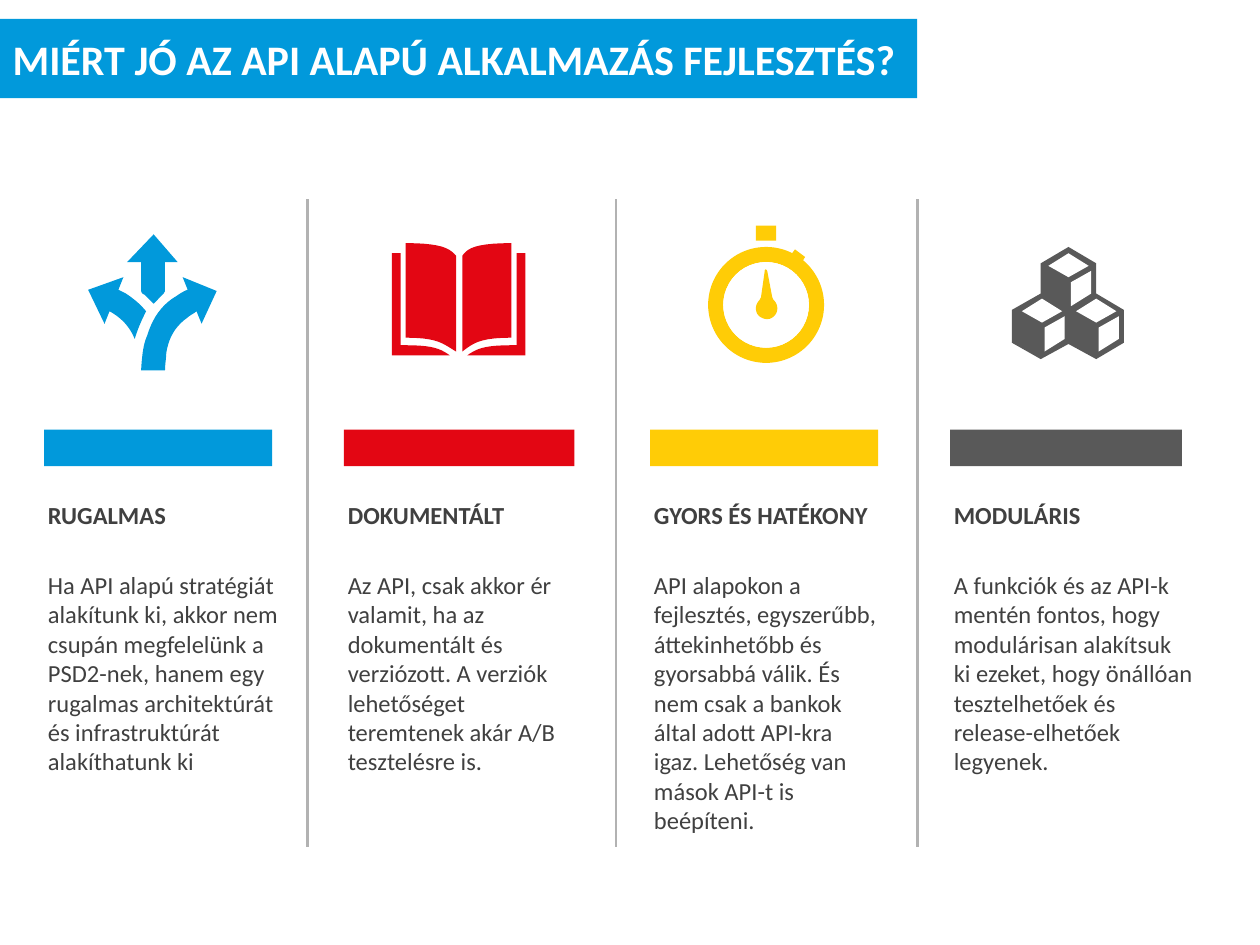
from dataclasses import dataclass

from lxml.etree import SubElement
from pptx import Presentation
from pptx.dml.color import RGBColor
from pptx.enum.shapes import MSO_CONNECTOR, MSO_SHAPE
from pptx.enum.text import MSO_ANCHOR, MSO_AUTO_SIZE, PP_ALIGN
from pptx.oxml.ns import qn
from pptx.util import Inches, Pt


@dataclass(frozen=True)
class Theme:
    font: str = "Calibri"
    title_size: int = 24
    text_size: int = 14
    blue: str = "0199DB"
    red: str = "E30613"
    yellow: str = "FFCC06"
    gray: str = "595959"
    divider: str = "B2B2B2"
    text: str = "404040"
    white: str = "FFFFFF"


def apply_format(target, values):
    for name, value in values.items():
        setattr(target, name, value)


def cubic_points(start, curve, steps=10):
    controls = [start, curve[:2], curve[2:4], curve[4:]]
    for step in range(1, steps + 1):
        t = step / steps
        weights = ((1 - t) ** 3, 3 * t * (1 - t) ** 2, 3 * t * t * (1 - t), t ** 3)
        yield tuple(
            sum(weight * point[axis] for weight, point in zip(weights, controls))
            for axis in (0, 1)
        )


def flatten(contour):
    points = [contour[0]]
    for segment in contour[1:]:
        if len(segment) == 2:
            points.append(segment)
        else:
            points.extend(cubic_points(points[-1], segment))
    return [(Inches(x), Inches(y)) for x, y in points]


class SlideBuilder:
    def __init__(self, slide, theme):
        self.slide = slide
        self.theme = theme

    def format_font(self, paragraph, size, color, bold):
        values = {"name": self.theme.font, "size": Pt(size), "bold": bold}
        apply_format(paragraph.font, values)
        paragraph.font.color.rgb = RGBColor.from_string(color)

    def paint(self, shape, color):
        shape.shadow.inherit = False
        shape.fill.solid()
        shape.fill.fore_color.rgb = RGBColor.from_string(color)
        shape.line.fill.background()
        return shape

    def title(self, text, left, top, width, height):
        shape = self.slide.shapes.title
        apply_format(shape, {
            "left": Inches(left), "top": Inches(top),
            "width": Inches(width), "height": Inches(height),
        })
        shape.fill.solid()
        shape.fill.fore_color.rgb = RGBColor.from_string(self.theme.blue)
        apply_format(shape.text_frame, {
            "text": text, "word_wrap": True,
            "auto_size": MSO_AUTO_SIZE.NONE, "vertical_anchor": MSO_ANCHOR.MIDDLE,
        })
        paragraph = shape.text_frame.paragraphs[0]
        paragraph.alignment = PP_ALIGN.LEFT
        self.format_font(paragraph, self.theme.title_size, self.theme.white, True)

    def shape(self, kind, color, left, top, width, height):
        box = (Inches(value) for value in (left, top, width, height))
        return self.paint(self.slide.shapes.add_shape(kind, *box), color)

    def outline(self, color, *contours):
        first, *others = [flatten(contour) for contour in contours]
        builder = self.slide.shapes.build_freeform(*first[0], scale=1.0)
        builder.add_line_segments(first[1:], close=True)
        for points in others:
            builder.move_to(*points[0])
            builder.add_line_segments(points[1:], close=True)
        return self.paint(builder.convert_to_shape(), color)

    def divider(self, x, top, bottom):
        line = self.slide.shapes.add_connector(
            MSO_CONNECTOR.STRAIGHT, Inches(x), Inches(top), Inches(x), Inches(bottom)
        )
        line.line.width = Pt(1.5)
        line.line.color.rgb = RGBColor.from_string(self.theme.divider)
        SubElement(line._element.spPr, qn("a:effectLst"))

    def description(self, heading, body, left, top, width, height):
        box = (Inches(value) for value in (left, top, width, height))
        frame = self.slide.shapes.add_textbox(*box).text_frame
        apply_format(frame, {
            "word_wrap": True, "auto_size": MSO_AUTO_SIZE.NONE,
            "margin_left": Inches(0.04), "margin_top": Inches(0.04),
            "margin_right": Inches(0.04), "margin_bottom": Inches(0.08),
        })
        frame.text = f"{heading}\n{body}"
        for paragraph, bold, space in zip(frame.paragraphs, (True, False), (23, 6)):
            paragraph.space_after = Pt(space)
            self.format_font(paragraph, self.theme.text_size, self.theme.text, bold)

    def arrows(self):
        self.outline(self.theme.blue, [
            (1.31, 2.94), (1.12, 2.94), (1.13, 2.79, 1.14, 2.73, 1.17, 2.66),
            (1.21, 2.53, 1.28, 2.42, 1.4, 2.35), (1.43, 2.33, 1.46, 2.31, 1.49, 2.3),
            (1.45, 2.2), (1.72, 2.31), (1.6, 2.57), (1.56, 2.47),
            (1.54, 2.49, 1.51, 2.5, 1.49, 2.52), (1.39, 2.59, 1.34, 2.68, 1.32, 2.8),
            (1.32, 2.84, 1.31, 2.89, 1.31, 2.94),
        ])
        self.outline(self.theme.blue, [
            (0.87, 2.47), (0.83, 2.57), (0.7, 2.3), (0.98, 2.2), (0.94, 2.3),
            (0.96, 2.31, 0.98, 2.32, 1, 2.33), (1.06, 2.37, 1.11, 2.41, 1.16, 2.47),
            (1.12, 2.55, 1.09, 2.62, 1.07, 2.69), (1.03, 2.59, 0.96, 2.52, 0.87, 2.47),
        ])
        self.outline(self.theme.blue, [
            (1.12, 2.08), (1.01, 2.08), (1.22, 1.86), (1.41, 2.08), (1.31, 2.08),
            (1.31, 2.31), (1.3, 2.33), (1.22, 2.41), (1.15, 2.34),
            (1.12, 2.33, 1.12, 2.31, 1.12, 2.29),
        ])

    def book(self):
        self.outline(
            self.theme.red,
            [(3.22, 1.93), (3.22, 2.68), (3.48, 2.68, 3.52, 2.73, 3.62, 2.79),
             (3.62, 2.03), (3.57, 1.97, 3.5, 1.93, 3.22, 1.93)],
            [(4.06, 1.93), (3.78, 1.93, 3.71, 1.97, 3.67, 2.03), (3.67, 2.79),
             (3.75, 2.73, 3.8, 2.68, 4.06, 2.68)],
            [(3.11, 2.01), (3.11, 2.82), (3.57, 2.82),
             (3.5, 2.77, 3.44, 2.74, 3.22, 2.74), (3.18, 2.74), (3.18, 2.01)],
            [(4.1, 2.01), (4.1, 2.74), (4.06, 2.74),
             (3.84, 2.74, 3.78, 2.77, 3.71, 2.82), (4.17, 2.82), (4.17, 2.01)],
        )

    def stopwatch(self):
        color = self.theme.yellow
        ring = self.shape(MSO_SHAPE.DONUT, color, 5.62, 1.96, 0.92, 0.92)
        ring.adjustments[0] = 0.13
        self.outline(color, [
            (6.34, 2.12), (6.31, 2.09, 6.28, 2.08, 6.25, 2.06), (6.31, 1.98), (6.39, 2.04),
        ])
        self.shape(MSO_SHAPE.OVAL, self.theme.white, 5.74, 2.08, 0.68, 0.68)
        self.outline(color, [
            (6.17, 2.45), (6.17, 2.49, 6.14, 2.52, 6.11, 2.53),
            (6.07, 2.54, 6.03, 2.52, 6.01, 2.49), (5.99, 2.45, 6, 2.41, 6.03, 2.38),
            (6.04, 2.36), (6.07, 2.15), (6.07, 2.14, 6.08, 2.13, 6.09, 2.15),
            (6.13, 2.36), (6.14, 2.38), (6.16, 2.4, 6.17, 2.42, 6.17, 2.45),
        ])
        self.shape(MSO_SHAPE.RECTANGLE, color, 6, 1.79, 0.16, 0.12)

    def cubes(self):
        self.outline(self.theme.gray, [
            (8.48, 1.96), (8.7, 2.09), (8.7, 2.33), (8.92, 2.46), (8.92, 2.72), (8.7, 2.85),
            (8.48, 2.73), (8.26, 2.85), (8.03, 2.72), (8.03, 2.46), (8.26, 2.33), (8.26, 2.09),
        ])
        top_face = [(-0.16, 0), (0, -0.1), (0.16, 0), (0, 0.09)]
        side_face = [(0.02, 0.32), (0.02, 0.13), (0.18, 0.04), (0.18, 0.22)]
        for x, y in ((8.48, 2.11), (8.27, 2.47), (8.7, 2.47)):
            for face in (top_face, side_face):
                self.outline(self.theme.white, [(x + dx, y + dy) for dx, dy in face])


def main():
    theme = Theme()
    presentation = Presentation()
    apply_format(presentation, {"slide_width": Inches(10), "slide_height": Inches(7.5)})
    builder = SlideBuilder(presentation.slides.add_slide(presentation.slide_layouts[5]), theme)
    builder.title("MIÉRT JÓ AZ API ALAPÚ ALKALMAZÁS FEJLESZTÉS?", 0, 0.15, 7.28, 0.63)
    columns = [
        (0.35, 1.81, 1.93, theme.blue, "RUGALMAS", "Ha API alapú stratégiát alakítunk ki, akkor nem csupán megfelelünk a PSD2-nek, hanem egy rugalmas architektúrát és infrastruktúrát alakíthatunk ki"),
        (2.73, 1.83, 1.92, theme.red, "DOKUMENTÁLT", "Az API, csak akkor ér valamit, ha az dokumentált és verziózott. A verziók lehetőséget teremtenek akár A/B tesztelésre is."),
        (5.16, 1.81, 1.85, theme.yellow, "GYORS ÉS HATÉKONY", "API alapokon a fejlesztés, egyszerűbb, áttekinhetőbb és gyorsabbá válik. És nem csak a bankok által adott API-kra igaz. Lehetőség van mások API-t is beépíteni."),
        (7.54, 1.84, 1.98, theme.gray, "MODULÁRIS", "A funkciók és az API-k mentén fontos, hogy modulárisan alakítsuk ki ezeket, hogy önállóan tesztelhetőek és release-elhetőek legyenek."),
    ]
    for left, bar_width, text_width, color, heading, body in columns:
        builder.shape(MSO_SHAPE.RECTANGLE, color, left, 3.41, bar_width, 0.29)
        builder.description(heading, body, left - 0.01, 3.93, text_width, 2.31)
    for x in (2.44, 4.89, 7.28):
        builder.divider(x, 1.58, 6.72)
    for draw_icon in (builder.stopwatch, builder.cubes, builder.book, builder.arrows):
        draw_icon()
    presentation.save("out.pptx")


if __name__ == "__main__":
    main()
